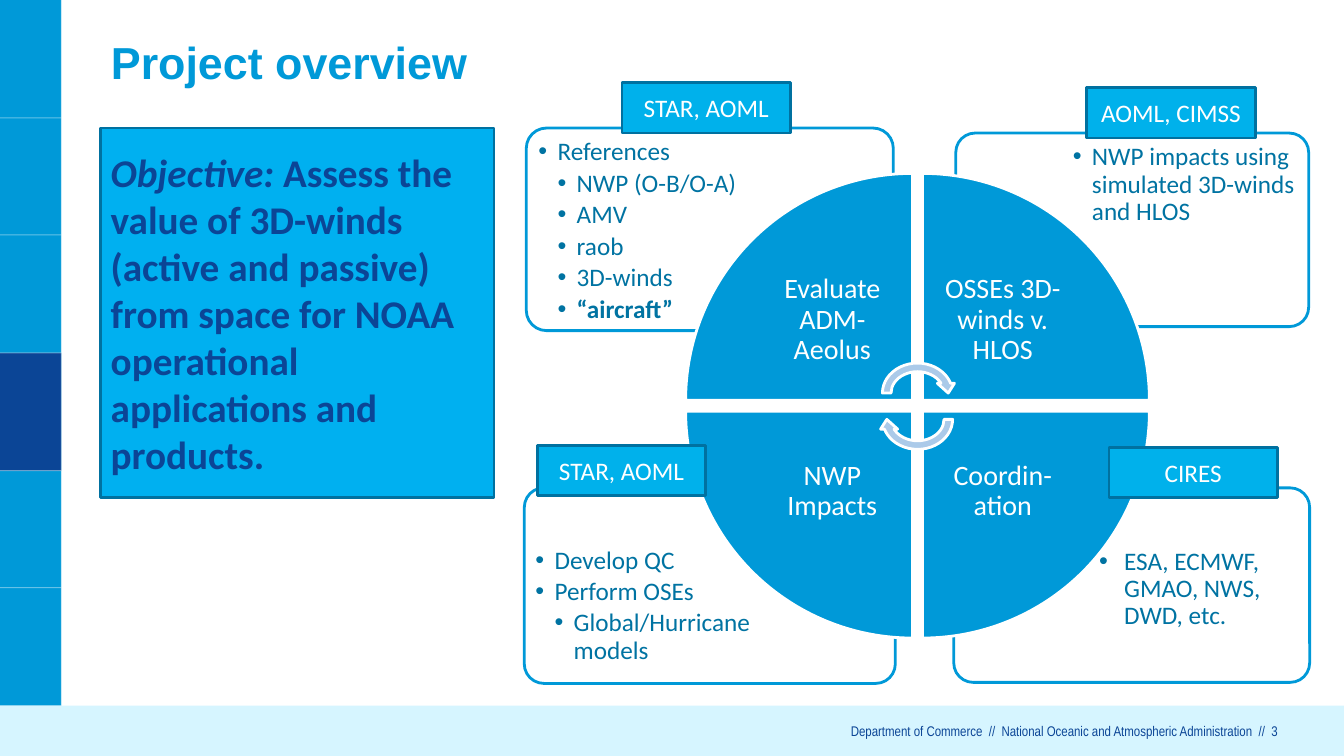
from lxml import etree
from pptx import Presentation
from pptx import util as u
from pptx.dml.color import RGBColor
from pptx.enum import shapes, text
from pptx.oxml.ns import qn

PX = 9144  # 100 px to the inch
KIND = shapes.MSO_SHAPE
ALIGN = text.PP_ALIGN
MIDDLE = text.MSO_ANCHOR.MIDDLE
COLOURS = {
    "blue": "0099D8", "navy": "0B4596", "objective": "00B0F0", "tag": "00B1EB",
    "edge": "0071A0", "body": "0073A2", "arrow": "ABCAE9", "pale": "D6F5FF",
    "white": "FFFFFF",
}
# heading, bullets as (level, words, bold), card box, bullet box, tag box, indent and hang
CARDS = [
    ("CIRES", [(1, "ESA, ECMWF, GMAO, NWS, DWD, etc.", False)],
     (946, 484, 353, 193), (111, 53, 239, 136), (154, -40), (51, 25)),
    ("STAR, AOML", [(1, "Develop QC", False), (1, "Perform OSEs", False),
                    (2, "Global/Hurricane models", False)],
     (520, 484, 368, 194), (4, 52, 249, 137), (13, -42), (19, 19)),
    ("AOML, CIMSS", [(1, "NWP impacts using simulated 3D-winds and HLOS", False)],
     (948, 132, 350, 192), (109, 4, 237, 135), (130, -45), (19, 19)),
    ("STAR, AOML", [(1, "References", False), (2, "NWP (O-B/O-A)", False), (2, "AMV", False),
                    (2, "raob", False), (2, "3D-winds", False), (2, "“aircraft”", True)],
     (522, 127, 364, 201), (5, 4, 246, 142), (95, -45), (19, 19)),
]
# column, row, rotation, label
WEDGES = [
    (0, 0, 0, "Evaluate ADM-Aeolus"),
    (1, 0, 90, "OSSEs 3D-winds v. HLOS"),
    (1, 1, 180, "Coordin-ation"),
    (0, 1, 270, "NWP Impacts"),
]


def px(*lengths):
    return [u.Emu(round(length * PX)) for length in lengths]


def colour(name):
    return RGBColor.from_string(COLOURS[name])


def add_shape(page, kind, box, fill, line=None, rotation=0):
    shape = page.shapes.add_shape(kind, *px(*box))
    shape.shadow.inherit = False
    shape.rotation = rotation
    shape.fill.solid()
    shape.fill.fore_color.rgb = colour(fill)
    if line:
        shape.line.color.rgb = colour(line)
        shape.line.width = u.Pt(2)
    else:
        shape.line.fill.background()
    return shape


def set_frame(shape, inset=(10, 5), anchor=text.MSO_ANCHOR.TOP):
    frame = shape.text_frame
    across, down = px(*inset)
    settings = {"word_wrap": True, "vertical_anchor": anchor, "margin_left": across,
                "margin_right": across, "margin_top": down, "margin_bottom": down}
    for name, value in settings.items():
        setattr(frame, name, value)
    return frame


def add_box(page, box, inset=(0, 0), anchor=text.MSO_ANCHOR.TOP):
    return set_frame(page.shapes.add_textbox(*px(*box)), inset, anchor)


def write(para, words, size, shade, font="Calibri", align=ALIGN.LEFT, spacing=1.0, **style):
    para.alignment = align
    para.line_spacing = spacing
    span = para.add_run()
    span.text = words
    for name, value in {"name": font, "size": u.Pt(size), **style}.items():
        setattr(span.font, name, value)
    span.font.color.rgb = colour(shade)


def add_bullet(para, indent, hang):
    properties = para._p.get_or_add_pPr()
    left, first = px(indent, -hang)
    properties.set("marL", str(left))
    properties.set("indent", str(first))
    etree.SubElement(properties, qn("a:buFont")).set("typeface", "Arial")
    etree.SubElement(properties, qn("a:buChar")).set("char", "•")


def add_rule(page, start, end):
    """Draw a thin, mostly transparent white line."""
    rule = page.shapes.add_connector(shapes.MSO_CONNECTOR.STRAIGHT, *px(*start, *end))
    rule.line.color.rgb = colour("white")
    rule.line.width = u.Pt(0.75)
    shade = rule.line._ln.find(".//" + qn("a:srgbClr"))
    etree.SubElement(shade, qn("a:alpha")).set("val", "40000")
    etree.SubElement(rule._element.spPr, qn("a:effectLst"))


def add_sidebar(page, box):
    left, top, width, height = box
    cells = [round(top + 700 * row / 6) for row in range(7)]
    add_shape(page, KIND.RECTANGLE, box, "blue")
    add_shape(page, KIND.RECTANGLE, (left, cells[3], width, cells[4] - cells[3]), "navy")
    for row in cells[1:]:
        add_rule(page, (left, row), (left + width, row))
    add_rule(page, (left + width, top), (left + width, top + height))


def add_footer(page, box):
    left, top, width, height = box
    add_shape(page, KIND.RECTANGLE, box, "pale")
    frame = add_box(page, (left + 211, top + 17, width - 277, 17))
    write(frame.paragraphs[0],
          "Department of Commerce  //  National Oceanic and Atmospheric Administration  //  3",
          10, "navy", "Arial Narrow", ALIGN.RIGHT)


def add_title(page, box):
    frame = add_box(page, box, anchor=MIDDLE)
    write(frame.paragraphs[0], "Project overview", 32, "blue", "Arial", bold=True)


def add_objective(page, box):
    panel = add_shape(page, KIND.RECTANGLE, box, "objective", "edge")
    para = set_frame(panel, anchor=MIDDLE).paragraphs[0]
    write(para, "Objective:", 28, "navy", bold=True, italic=True)
    write(para, " Assess the value of 3D-winds (active and passive) from space for NOAA "
          "operational applications and products.", 28, "navy", bold=True)


def add_card(page, box, bullets, bullet_box, indents):
    left, top, width, height = box
    card = add_shape(page, KIND.ROUNDED_RECTANGLE, box, "white", "blue")
    card.adjustments[0] = 0.1
    across, down, *size = bullet_box
    frame = add_box(page, (left + across, top + down, *size), (7, 7))
    indent, hang = indents
    for index, (level, words, bold) in enumerate(bullets):
        para = frame.add_paragraph() if index else frame.paragraphs[0]
        para.space_after = u.Pt(3)
        para.line_spacing = 0.9
        add_bullet(para, indent * level, hang)
        write(para, words, 18, "body", spacing=0.9, bold=bold)


def add_wheel(page, box):
    left, top, width, height = box
    wedge, label = 225, 159
    for column, row, rotation, words in WEDGES:
        x = left + column * (width - wedge)
        y = top + row * (height - wedge)
        add_shape(page, KIND.PIE_WEDGE, (x, y, wedge, wedge), "blue", "white", rotation)
        inner = (x + (1 - column) * (wedge - label), y + (1 - row) * (wedge - label))
        frame = add_box(page, (*inner, label, label), (16, 16), MIDDLE)
        write(frame.paragraphs[0], words, 20, "white", align=ALIGN.CENTER, spacing=0.9)
    for down, rotation in ((184, 0), (210, 180)):
        add_shape(page, KIND.CIRCULAR_ARROW, (left + 191, top + down, 78, 68),
                  "arrow", "white", rotation)


def add_tag(page, box, words):
    tag = add_shape(page, KIND.RECTANGLE, box, "tag", "edge")
    frame = set_frame(tag, anchor=MIDDLE)
    write(frame.paragraphs[0], words, 18, "white", align=ALIGN.CENTER)


def add_overview(page, box):
    left, top, width, height = box
    add_sidebar(page, (left, top, 61, height))
    add_footer(page, (left, top + 700, width, 50))
    add_title(page, (left + 110, top + 30, 935, 62))
    add_objective(page, (left + 100, top + 127, 390, 367))
    for _, bullets, card, bullet_box, _, indents in CARDS:
        add_card(page, card, bullets, bullet_box, indents)
    add_wheel(page, (left + 680, top + 172, 460, 461))
    for heading, _, card, _, (across, down), _ in CARDS:
        add_tag(page, (card[0] + across, card[1] + down, 167, 50), heading)


def main():
    deck = Presentation()
    deck.slide_width, deck.slide_height = px(1333, 750)
    page = deck.slides.add_slide(deck.slide_layouts[6])
    add_overview(page, (0, 0, 1333, 750))
    deck.save("out.pptx")


if __name__ == "__main__":
    main()
